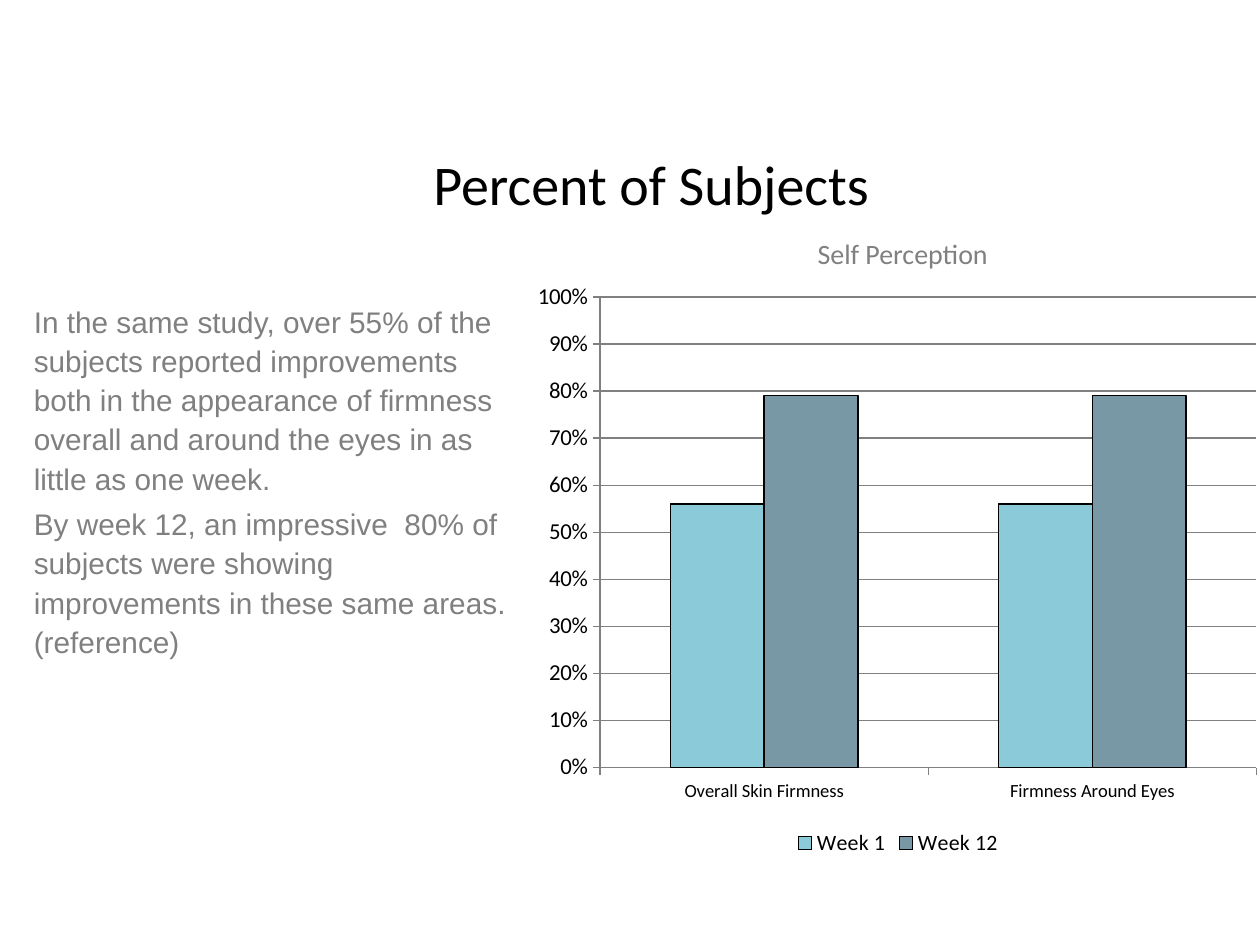
from typing import NamedTuple

from lxml.etree import SubElement
from pptx import Presentation
from pptx.chart.data import CategoryChartData
from pptx.dml.color import RGBColor
from pptx.enum.chart import XL_CHART_TYPE as ChartType
from pptx.enum.chart import XL_LEGEND_POSITION as LegendPos
from pptx.enum.chart import XL_TICK_MARK as Tick
from pptx.enum.text import MSO_ANCHOR as Anchor
from pptx.enum.text import PP_ALIGN as Align
from pptx.oxml.ns import qn
from pptx.util import Inches, Length, Pt

BLACK = RGBColor(0x00, 0x00, 0x00)
GRAY = RGBColor(0x80, 0x80, 0x80)
AQUA = RGBColor(0x8B, 0xCA, 0xD9)
SLATE = RGBColor(0x79, 0x98, 0xA6)


class Box(NamedTuple):
    left: Length
    top: Length
    width: Length
    height: Length


class TextStyle(NamedTuple):
    font: str
    size: float
    color: RGBColor
    align: Align = Align.LEFT
    anchor: Anchor = Anchor.TOP
    line_spacing: float = 1.0
    gap: float = 0


class Series(NamedTuple):
    name: str
    values: tuple[float, ...]
    color: RGBColor


CATEGORIES = ("Overall Skin Firmness", "Firmness Around Eyes")
SERIES = (
    Series("Week 1", (0.56, 0.56), AQUA),
    Series("Week 12", (0.79, 0.79), SLATE),
)
PLOT_LAYOUT = {"x": 0.1, "y": 0.04, "w": 0.88, "h": 0.8}
FINDINGS = (
    "In the same study, over 55% of the subjects reported improvements both in "
    "the appearance of firmness overall and around the eyes in as little as one week.",
    "By week 12, an impressive  80% of subjects were showing improvements in "
    "these same areas. (reference)",
)


def add_text(s, box: Box, paragraphs: tuple[str, ...], style: TextStyle) -> None:
    tf = s.shapes.add_textbox(*box).text_frame
    tf.word_wrap = True
    tf.vertical_anchor = style.anchor
    for i, text in enumerate(paragraphs):
        p = tf.add_paragraph() if i else tf.paragraphs[0]
        p.text = text
        p.alignment = style.align
        p.line_spacing = style.line_spacing
        if i:
            p.space_before = Pt(style.gap)
        p.font.name = style.font
        p.font.size = Pt(style.size)
        p.font.color.rgb = style.color


def set_plot_layout(chart, layout: dict[str, float]) -> None:
    plot_area = chart._chartSpace.chart.plotArea
    for old in plot_area.findall(qn("c:layout")):
        plot_area.remove(old)
    holder = SubElement(plot_area, qn("c:layout"))
    plot_area.insert(0, holder)
    manual = SubElement(holder, qn("c:manualLayout"))
    settings = {"layoutTarget": "inner", "xMode": "edge", "yMode": "edge", **layout}
    for tag, value in settings.items():
        SubElement(manual, qn(f"c:{tag}")).set("val", str(value))


def style_axis(axis, size: float) -> None:
    axis.major_tick_mark = Tick.OUTSIDE
    axis.minor_tick_mark = Tick.NONE
    axis.tick_labels.font.size = Pt(size)
    axis.format.line.color.rgb = GRAY
    axis.format.line.width = Pt(0.75)


def add_columns(s, box: Box, series: tuple[Series, ...]) -> None:
    data = CategoryChartData(number_format="0%")
    data.categories = CATEGORIES
    for item in series:
        data.add_series(item.name, item.values)
    chart = s.shapes.add_chart(ChartType.COLUMN_CLUSTERED, *box, data).chart
    chart.has_title = False
    chart.font.name = "Calibri"
    chart.font.size = Pt(18)
    chart.font.color.rgb = BLACK

    plot = chart.plots[0]
    plot.gap_width = 150
    plot.overlap = 0
    plot.vary_by_categories = False
    for bars, item in zip(plot.series, series):
        bars.format.fill.solid()
        bars.format.fill.fore_color.rgb = item.color
        bars.format.line.color.rgb = BLACK
        bars.format.line.width = Pt(0.75)

    style_axis(chart.category_axis, 10.6)
    axis = chart.value_axis
    style_axis(axis, 13)
    axis.minimum_scale = 0
    axis.maximum_scale = 1
    axis.major_unit = 0.1
    axis.tick_labels.number_format = "0%"
    axis.tick_labels.number_format_is_linked = False
    axis.has_major_gridlines = True
    axis.major_gridlines.format.line.color.rgb = GRAY
    axis.major_gridlines.format.line.width = Pt(0.75)

    chart.has_legend = True
    chart.legend.position = LegendPos.BOTTOM
    chart.legend.include_in_layout = False
    chart.legend.font.size = Pt(12.5)
    set_plot_layout(chart, PLOT_LAYOUT)


def main() -> None:
    prs = Presentation()
    prs.slide_width = Inches(10)
    prs.slide_height = Inches(7.5)
    s = prs.slides.add_slide(prs.slide_layouts[6])

    add_text(
        s,
        Box(Inches(0.17), Inches(1.08), Inches(10), Inches(0.75)),
        ("Percent of Subjects",),
        TextStyle("Calibri", 32, BLACK, Align.CENTER, Anchor.MIDDLE),
    )
    add_text(
        s,
        Box(Inches(0.17), Inches(2.33), Inches(4), Inches(3.83)),
        FINDINGS,
        TextStyle("Arial", 17, GRAY, line_spacing=1.1, gap=3.4),
    )
    add_columns(s, Box(Inches(4.17), Inches(2.17), Inches(5.92), Inches(4.67)), SERIES)
    add_text(
        s,
        Box(Inches(4), Inches(1.83), Inches(6.33), Inches(0.37)),
        ("Self Perception",),
        TextStyle("Calibri", 16, GRAY, Align.CENTER),
    )
    prs.save("out.pptx")


if __name__ == "__main__":
    main()
